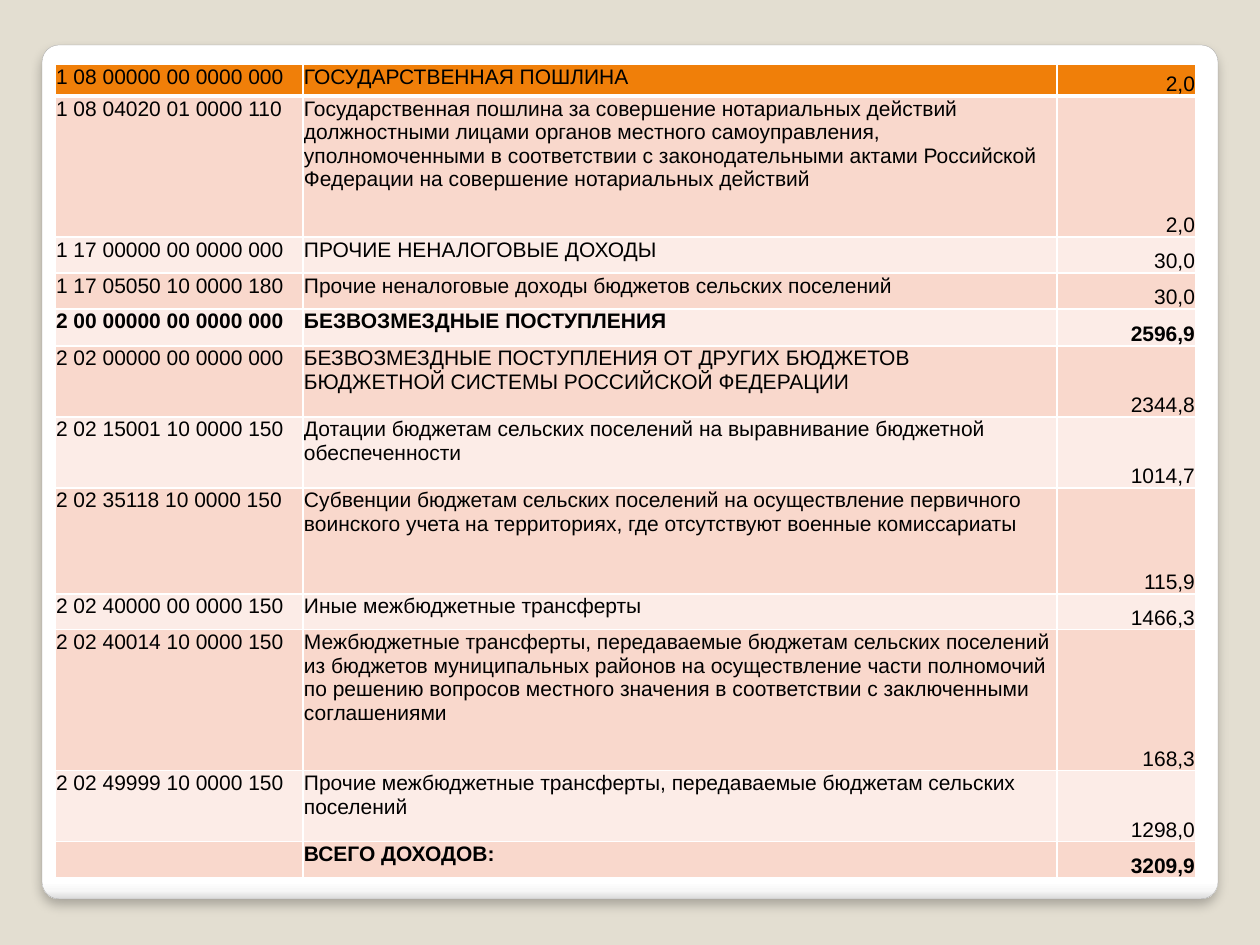
import copy
from typing import NamedTuple

import lxml.etree
import pptx
import pptx.dml.color
import pptx.enum.shapes
import pptx.enum.text
import pptx.oxml.ns
import pptx.util

EMU_PER_PX = 914400 / 126
COLORS = {
    "background": "E3DED1",
    "panel_line": "A4A4A4",
    "shadow": "000000",
    "text": "000000",
    "border": "FFFFFF",
    "header": "F07F09",
    "band_dark": "F9D8CC",
    "band_light": "FCECE7",
}
PANEL_STOPS = [(0, "FFFFFF"), (98, "FFFFFF"), (99, "F7F7F7"), (100, "DADADA")]
COLUMN_WIDTHS = [248, 754, 139]


class Income(NamedTuple):
    code: str
    title: str
    amount: str
    height: int
    bold: bool = False


INCOMES = [
    Income("1 08 00000 00 0000 000", "ГОСУДАРСТВЕННАЯ ПОШЛИНА", "2,0", 32),
    Income("1 08 04020 01 0000 110",
           "Государственная пошлина за совершение нотариальных действий "
           "должностными лицами органов местного самоуправления, "
           "уполномоченными в соответствии с законодательными актами Российской "
           "Федерации на совершение нотариальных действий", "2,0", 141),
    Income("1 17 00000 00 0000 000", "ПРОЧИЕ НЕНАЛОГОВЫЕ ДОХОДЫ", "30,0", 36),
    Income("1 17 05050 10 0000 180",
           "Прочие неналоговые доходы бюджетов сельских поселений", "30,0", 36),
    Income("2 00 00000 00 0000 000", "БЕЗВОЗМЕЗДНЫЕ ПОСТУПЛЕНИЯ", "2596,9", 37, True),
    Income("2 02 00000 00 0000 000",
           "БЕЗВОЗМЕЗДНЫЕ ПОСТУПЛЕНИЯ ОТ ДРУГИХ БЮДЖЕТОВ "
           "БЮДЖЕТНОЙ СИСТЕМЫ РОССИЙСКОЙ ФЕДЕРАЦИИ", "2344,8", 71),
    Income("2 02 15001 10 0000 150",
           "Дотации бюджетам сельских поселений на выравнивание бюджетной "
           "обеспеченности", "1014,7", 71),
    Income("2 02 35118 10 0000 150",
           "Субвенции бюджетам сельских поселений на осуществление первичного "
           "воинского учета на территориях, где отсутствуют военные комиссариаты",
           "115,9", 106),
    Income("2 02 40000 00 0000 150", "Иные межбюджетные трансферты", "1466,3", 36),
    Income("2 02 40014 10 0000 150",
           "Межбюджетные трансферты, передаваемые бюджетам сельских поселений "
           "из бюджетов муниципальных районов на осуществление части полномочий "
           "по решению вопросов местного значения в соответствии с заключенными "
           "соглашениями", "168,3", 141),
    Income("2 02 49999 10 0000 150",
           "Прочие межбюджетные трансферты, передаваемые бюджетам сельских "
           "поселений", "1298,0", 71),
    Income("", "ВСЕГО ДОХОДОВ:", "3209,9", 36, True),
]


def px(length: int) -> pptx.util.Emu:
    return pptx.util.Emu(round(length * EMU_PER_PX))


def rgb(name: str) -> pptx.dml.color.RGBColor:
    return pptx.dml.color.RGBColor.from_string(COLORS[name])


def add_element(parent, tag: str, **attributes):
    return lxml.etree.SubElement(
        parent, pptx.oxml.ns.qn(tag), {key: str(value) for key, value in attributes.items()})


def draw_panel(slide) -> None:
    panel = slide.shapes.add_shape(
        pptx.enum.shapes.MSO_SHAPE.ROUNDED_RECTANGLE, px(42), px(45), px(1176), px(854))
    panel.adjustments[0] = 0.02
    panel.line.color.rgb = rgb("panel_line")
    panel.line.width = pptx.util.Pt(0.16)
    panel.fill.gradient()
    panel.fill.gradient_angle = 270
    properties = panel.element.spPr
    stops = properties.find(".//" + pptx.oxml.ns.qn("a:gsLst"))
    stops.clear()
    for position, color in PANEL_STOPS:
        stop = add_element(stops, "a:gs", pos=position * 1000)
        add_element(stop, "a:srgbClr", val=color)
    panel.shadow.inherit = False
    effects = properties.find(pptx.oxml.ns.qn("a:effectLst"))
    shadow = add_element(effects, "a:outerShdw", blurRad=pptx.util.Pt(6),
                         dist=pptx.util.Pt(4), dir=5400000, algn="tl", rotWithShape=0)
    shade = add_element(shadow, "a:srgbClr", val=COLORS["shadow"])
    add_element(shade, "a:alpha", val=25000)


def set_borders(cell, top: int, bottom: int) -> None:
    """Give the cell borders, with top and bottom widths in points."""
    properties = cell._tc.get_or_add_tcPr()
    sides = [("a:lnL", 1), ("a:lnR", 1), ("a:lnT", top), ("a:lnB", bottom)]
    for order, (tag, width) in enumerate(sides):
        border = add_element(properties, tag, w=pptx.util.Pt(width))
        fill = add_element(border, "a:solidFill")
        add_element(fill, "a:srgbClr", val=COLORS["border"])
        properties.insert(order, border)


def fill_cell(cell, text: str, color: str, bold: bool, is_amount: bool) -> None:
    cell.margin_left = cell.margin_right = cell.margin_top = px(1)
    cell.margin_bottom = 0
    cell.fill.solid()
    cell.fill.fore_color.rgb = rgb(color)
    cell.vertical_anchor = (pptx.enum.text.MSO_ANCHOR.BOTTOM if is_amount
                            else pptx.enum.text.MSO_ANCHOR.TOP)
    paragraph = cell.text_frame.paragraphs[0]
    if not text:
        add_element(paragraph._p, "a:endParaRPr", sz=1200)
        return
    paragraph.text = text
    if is_amount:
        paragraph.alignment = pptx.enum.text.PP_ALIGN.RIGHT
    font = paragraph.runs[0].font
    font.name = "Arial"
    font.size = pptx.util.Pt(12)
    font.bold = bold
    font.color.rgb = rgb("text")


def draw_incomes(slide) -> None:
    table = slide.shapes.add_table(
        len(INCOMES), len(COLUMN_WIDTHS), px(55), px(64), px(sum(COLUMN_WIDTHS)),
        px(sum(income.height for income in INCOMES))).table
    for column, width in zip(table.columns, COLUMN_WIDTHS):
        column.width = px(width)
    for index, (row, income) in enumerate(zip(table.rows, INCOMES)):
        row.height = px(income.height)
        band = "band_dark" if index % 2 else "band_light"
        color = band if index else "header"
        texts = (income.code, income.title, income.amount)
        for position, (cell, text) in enumerate(zip(row.cells, texts)):
            fill_cell(cell, text, color, income.bold, position == 2)
            set_borders(cell, 3 if index == 1 else 1, 3 if index == 0 else 1)


def main() -> None:
    presentation = pptx.Presentation()
    presentation.slide_width = px(1260)
    presentation.slide_height = px(945)
    slide = presentation.slides.add_slide(presentation.slide_layouts[6])
    slide.background.fill.solid()
    slide.background.fill.fore_color.rgb = rgb("background")
    draw_panel(slide)
    draw_incomes(slide)
    presentation.save("out.pptx")


if __name__ == "__main__":
    main()
